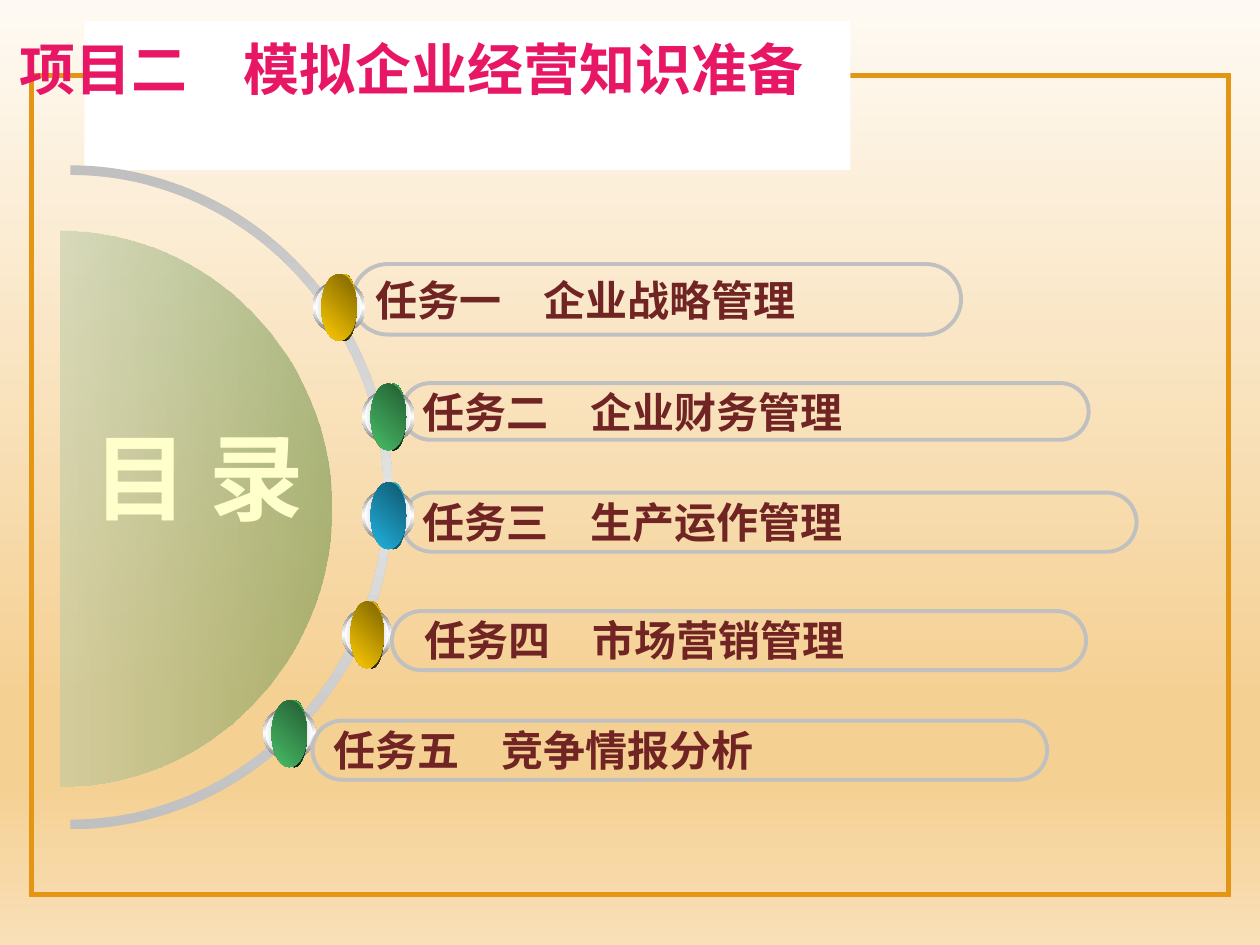
from lxml import etree
from pptx import Presentation
from pptx.dml.color import RGBColor
from pptx.enum.shapes import MSO_SHAPE as Shape
from pptx.enum.text import MSO_ANCHOR as Anchor, PP_ALIGN as Align
from pptx.oxml.ns import qn
from pptx.util import Pt

FRAME = RGBColor(0xE4, 0x95, 0x14)
WHITE = RGBColor(0xFF, 0xFF, 0xFF)
SILVER = RGBColor(0xC0, 0xC0, 0xC0)
MAROON = RGBColor(0x70, 0x24, 0x24)
PALE_GRAY = RGBColor(0xEA, 0xEA, 0xEA)


def stops(*pairs):
    """Turn (position, hex[, opacity]) tuples into gradient stops."""
    return [(p[0], RGBColor.from_string(p[1]), p[2] if len(p) > 2 else 100) for p in pairs]


BACKGROUND = stops((0, "FEFAF3"), (74, "F5D093"), (83, "F5D093"), (100, "F9E0B7"))
RAINBOW = stops((0, "A603AB"), (12, "E81766"), (27, "EE3F17"), (48, "FFFF00"),
                (65, "1A8D48"), (79, "0819FB"), (100, "A603AB"))
CREAM = stops((0, "FFFFCC"), (100, "FF9999"))
ARC_GRAY = stops((0, "C0C0C0"), (50, "E2E2E2"), (100, "C0C0C0"))
DISC_GREEN = stops((0, "B7C9A4", 52), (100, "6E9349", 56))
RIM_OUTER = stops((0, "767676"), (50, "FFFFFF"), (100, "767676"))
RIM_INNER = stops((0, "FFFFFF"), (50, "A2A2A2"), (100, "FFFFFF"))
SHEEN = stops((0, "6E9349"), (50, "FFFFFF"), (100, "6E9349"))
SHADE = stops((0, "6E9349"), (50, "3C5028"), (100, "6E9349"))

# Bead colours: gradient of the side, its angle, gradient of the face
GOLD = (stops((0, "000000"), (100, "FFCC00")), 315, stops((0, "FFCC00"), (100, "7C6300")))
GREEN = (stops((0, "000000"), (100, "48BE67")), 315, stops((0, "48BE67"), (100, "235C32")))
BLUE = (stops((0, "21B3E1"), (100, "0F5368")), 90, stops((0, "21B3E1"), (100, "10576D")))

TITLE = "项目二　模拟企业经营知识准备"
CONTENTS = "目 录"
PILLS = [  # text, (left, top, width, height)
    ("任务三　生产运作管理", (229.7, 281.5, 419.8, 33.8)),
    ("任务二　企业财务管理", (229.7, 218.9, 392.4, 32.4)),
    ("任务一　企业战略管理", (201.4, 150.9, 347.8, 40.3)),
    ("", (223.9, 349.2, 396.7, 33.8)),
    ("任务五　竞争情报分析", (178.6, 411.8, 419.8, 33.8)),
]
TASK_FOUR = ("任务四　市场营销管理", (235.4, 347.3, 396.7, 36))
BEADS = [  # left, top, horizontal scale, colours
    (178.6, 160.4, 1, GOLD),
    (150.2, 404, 1, GREEN),
    (206.8, 279.4, 1, BLUE),
    (195.6, 347.5, 0.94, GOLD),
    (206.8, 223, 1, GREEN),
]
BEAD_OUTER = (0, 0, 30.2, 30.2)
BEAD_INNER = (1.6, 1.6, 26.6, 26.6)
BEAD_SIDE = (10.8, -3.8, 14.4, 38.2)
BEAD_FACE = (5, -3.8, 20.2, 38.2)

BEZIER_CIRCLE = 0.55  # control point distance for a quarter circle
UNITS_PER_POINT = 100


def paint_gradient(owner, gradient_stops, angle):
    """Replace the solid fill directly inside owner by a linear gradient."""
    gradient = etree.Element(qn("a:gradFill"), rotWithShape="1")
    stop_list = etree.SubElement(gradient, qn("a:gsLst"))
    for position, color, opacity in gradient_stops:
        stop = etree.SubElement(stop_list, qn("a:gs"), pos=str(position * 1000))
        color_element = etree.SubElement(stop, qn("a:srgbClr"), val=str(color))
        if opacity < 100:
            etree.SubElement(color_element, qn("a:alpha"), val=str(opacity * 1000))
    etree.SubElement(gradient, qn("a:lin"), ang=str(angle * 60000), scaled="0")
    owner.replace(owner.find(qn("a:solidFill")), gradient)


def style_shape(shape, fill=None, gradient=None, angle=0, line=None, width=0):
    shape.shadow.inherit = False
    if fill or gradient:
        shape.fill.solid()
        shape.fill.fore_color.rgb = fill or WHITE
    else:
        shape.fill.background()
    if gradient:
        paint_gradient(shape.element.spPr, gradient, angle)
    if line:
        shape.line.color.rgb = line
        shape.line.width = Pt(width)
        etree.SubElement(shape.element.spPr.find(qn("a:ln")), qn("a:miter"), lim="800000")
    else:
        shape.line.fill.background()


def add_preset(shapes, kind, box, **style):
    shape = shapes.add_shape(kind, *map(Pt, box))
    style_shape(shape, **style)
    return shape


def write(shape, text, size, latin, east_asian, color=MAROON, align=Align.LEFT,
          anchor=Anchor.MIDDLE, wrap=False):
    frame = shape.text_frame
    frame.text = text
    frame.word_wrap = wrap
    frame.vertical_anchor = anchor
    paragraph = frame.paragraphs[0]
    paragraph.alignment = align
    run = paragraph.runs[0]
    run.font.size = Pt(size)
    run.font.bold = True
    run.font.color.rgb = color
    run.font.name = latin
    properties = run.font._element
    properties.find(qn("a:latin")).addnext(
        etree.Element(qn("a:ea"), typeface=east_asian))
    return paragraph, properties


def write_task(shape, text, wrap=False):
    write(shape, text, 24, "Arial", "Noto Sans CJK SC", wrap=wrap)


def half_ellipse(x, y, rx, ry):
    """Start point and two Bezier triples of the right half, top to bottom."""
    kx, ky = rx * BEZIER_CIRCLE, ry * BEZIER_CIRCLE
    return [(x, y - ry), (x + kx, y - ry), (x + rx, y - ky), (x + rx, y),
            (x + rx, y + ky), (x + kx, y + ry), (x, y + ry)]


def add_outline(shapes, halves, gradient, angle):
    """Join half ellipses by straight lines into one closed curved outline."""
    points = [(x * UNITS_PER_POINT, y * UNITS_PER_POINT) for half in halves for x, y in half]
    builder = shapes.build_freeform(*points[0], scale=Pt(1) / UNITS_PER_POINT)
    builder.add_line_segments(points[1:], close=True)
    shape = builder.convert_to_shape()
    segments = list(shape.element.spPr.iter(qn("a:lnTo")))
    for start in range(0, len(segments), 7):
        for first in (start, start + 3):
            curve = etree.Element(qn("a:cubicBezTo"))
            segments[first].addprevious(curve)
            for segment in segments[first:first + 3]:
                curve.append(segment[0])
                segment.getparent().remove(segment)
    style_shape(shape, gradient=gradient, angle=angle)


def add_pill(shapes, text, box):
    pill = add_preset(shapes, Shape.ROUNDED_RECTANGLE, box, line=SILVER, width=2.25)
    pill.adjustments[0] = 0.5
    if text:
        write_task(pill, text)


def add_bead(shapes, left, top, scale, colors):
    side, side_angle, face = colors
    layers = [
        (BEAD_OUTER, RIM_OUTER, 90), (BEAD_INNER, RIM_INNER, 0),
        (BEAD_SIDE, SHEEN, 315), (BEAD_SIDE, side, side_angle),
        (BEAD_FACE, SHADE, 45), (BEAD_FACE, face, 315),
    ]
    group = shapes.add_group_shape()
    for (x, y, width, height), gradient, angle in layers:
        box = (left + x * scale, top + y, width * scale, height)
        add_preset(group.shapes, Shape.OVAL, box, gradient=gradient, angle=angle)


def main():
    presentation = Presentation()
    presentation.slide_width, presentation.slide_height = Pt(720), Pt(540)
    slide = presentation.slides.add_slide(presentation.slide_layouts[6])
    shapes = slide.shapes
    slide.background.fill.solid()
    slide.background.fill.fore_color.rgb = WHITE
    paint_gradient(slide.element.find(".//" + qn("p:bgPr")), BACKGROUND, 90)

    add_preset(shapes, Shape.RECTANGLE, (18, 43.2, 684, 468), line=FRAME, width=3)
    add_preset(shapes, Shape.RECTANGLE, (48.2, 12, 437.8, 85.2), fill=WHITE)

    title = shapes.add_textbox(Pt(0.2), Pt(20.4), Pt(470), Pt(45.4))
    paragraph, properties = write(title, TITLE, 32, "Noto Sans CJK JP", "Noto Sans CJK JP",
                                  align=Align.CENTER, anchor=Anchor.TOP)
    paragraph.line_spacing = 0.9
    paint_gradient(properties, RAINBOW, 0)
    outline = etree.Element(qn("a:ln"), w=str(Pt(1)))
    outline_fill = etree.SubElement(outline, qn("a:solidFill"))
    etree.SubElement(outline_fill, qn("a:srgbClr"), val=str(PALE_GRAY))
    properties.insert(0, outline)

    outer = half_ellipse(40.2, 284.2, 184.3, 189.7)
    inner = half_ellipse(40.2, 284.2, 179.3, 184.2)
    add_outline(shapes, [outer, inner[::-1]], ARC_GRAY, 90)
    add_outline(shapes, [half_ellipse(34.4, 290.7, 154.8, 158.8)], DISC_GREEN, 0)

    for text, box in PILLS[:3]:
        add_pill(shapes, text, box)
    for bead in BEADS:
        add_bead(shapes, *bead)

    contents = shapes.add_textbox(Pt(46.1), Pt(236), Pt(135.4), Pt(61.9))
    _, properties = write(contents, CONTENTS, 54, "Noto Sans CJK SC", "Noto Sans CJK SC",
                          align=Align.CENTER, anchor=Anchor.TOP)
    paint_gradient(properties, CREAM, 90)

    text, box = TASK_FOUR
    write_task(shapes.add_textbox(*map(Pt, box)), text, wrap=True)
    for text, box in PILLS[3:]:
        add_pill(shapes, text, box)
    presentation.save("out.pptx")


if __name__ == "__main__":
    main()
